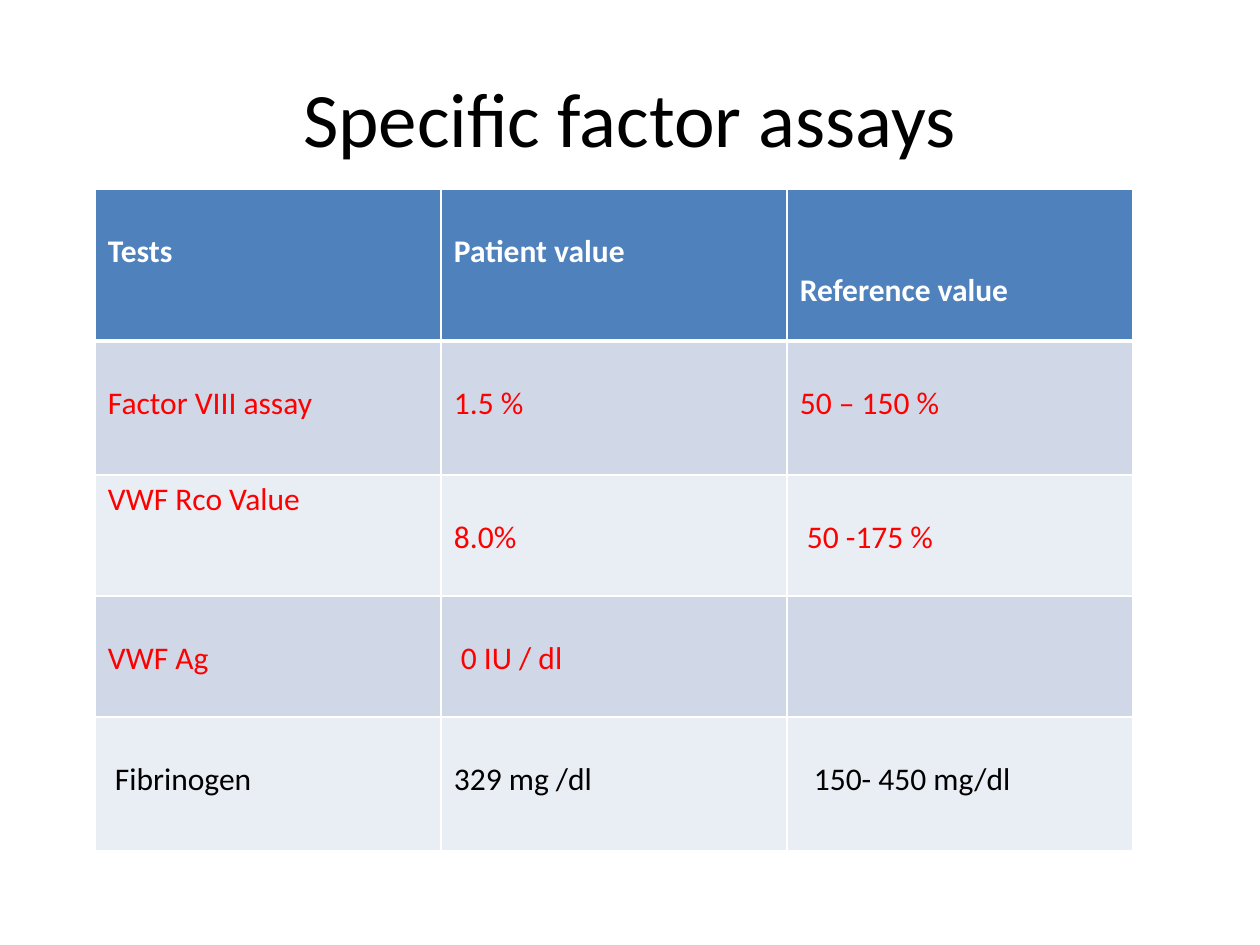
import pptx
import pptx.dml.color
import pptx.enum.text
import pptx.oxml
import pptx.oxml.ns
import pptx.util

RGB = pptx.dml.color.RGBColor
BLACK = RGB(0x00, 0x00, 0x00)
WHITE = RGB(0xFF, 0xFF, 0xFF)
RED = RGB(0xFF, 0x00, 0x00)
HEADER = RGB(0x4F, 0x81, 0xBD)
BANDS = RGB(0xD0, 0xD8, 0xE8), RGB(0xE9, 0xED, 0xF4)

EMU_PER_PX = 914400 / 126
FONT = "Calibri"
BODY_SIZE = 18
PAD_X, PAD_Y = 13, 6    # cell padding
LINE, SPACE = 38, 7     # height of a body line, width of a small indent

# One row: height, text colour, cells as (text, lines above, indent steps)
ROWS = [
    (152, WHITE, [("Tests", 1, 0), ("Patient value", 1, 0), ("Reference value", 2, 0)]),
    (134, RED, [("Factor VIII assay", 1, 0), ("1.5 %", 1, 0), ("50 – 150 %", 1, 0)]),
    (121, RED, [("VWF Rco Value", 0, 0), ("8.0%", 1, 0), ("50 -175 %", 1, 1)]),
    (121, RED, [("VWF Ag", 1, 0), ("0 IU / dl", 1, 1), ("", 0, 0)]),
    (134, BLACK, [("Fibrinogen", 1, 1), ("329 mg /dl", 1, 0), ("150- 450 mg/dl", 1, 2)]),
]


def px(n):
    return pptx.util.Emu(round(n * EMU_PER_PX))


class Deck:
    def __init__(self, width, height):
        self.prs = pptx.Presentation()
        self.prs.slide_width, self.prs.slide_height = px(width), px(height)
        self.s = self.prs.slides.add_slide(self.prs.slide_layouts[6])

    def run(self, p, text, size, color, bold=False):
        r = p.add_run()
        r.text = text
        r.font.name = FONT
        r.font.size = pptx.util.Pt(size)
        r.font.bold = bold
        r.font.color.rgb = color

    def title(self, text, x, y, w, h):
        sp = self.s.shapes.add_textbox(px(x), px(y), px(w), px(h))
        tf = sp.text_frame
        tf.word_wrap = True
        tf.vertical_anchor = pptx.enum.text.MSO_ANCHOR.MIDDLE
        p = tf.paragraphs[0]
        p.alignment = pptx.enum.text.PP_ALIGN.CENTER
        self.run(p, text, 44, BLACK)

    def border(self, cell, top, bottom):
        tc_pr = cell._tc.get_or_add_tcPr()
        sides = [("L", 1), ("R", 1), ("T", top), ("B", bottom)]
        for i, (side, points) in enumerate(sides):
            tc_pr.insert(i, pptx.oxml.parse_xml(
                f'<a:ln{side} {pptx.oxml.ns.nsdecls("a")} w="{pptx.util.Pt(points)}">'
                f'<a:solidFill><a:srgbClr val="{WHITE}"/></a:solidFill></a:ln{side}>'))

    def cell(self, cell, content, color, fill, bold):
        text, lines, steps = content
        cell.fill.solid()
        cell.fill.fore_color.rgb = fill
        cell.margin_left = px(PAD_X + steps * SPACE)
        cell.margin_right = px(PAD_X)
        cell.margin_top = px(PAD_Y + lines * LINE)
        cell.margin_bottom = px(PAD_Y)
        if text:
            self.run(cell.text_frame.paragraphs[0], text, BODY_SIZE, color, bold)

    def table(self, rows, x, y, col_width):
        n_cols = len(rows[0][2])
        height = sum(row[0] for row in rows)
        table = self.s.shapes.add_table(
            len(rows), n_cols, px(x), px(y), px(n_cols * col_width), px(height)).table
        table.first_row = table.horz_banding = False
        for col in table.columns:
            col.width = px(col_width)
        for i, (row_height, color, contents) in enumerate(rows):
            table.rows[i].height = px(row_height)
            fill = BANDS[(i - 1) % 2] if i else HEADER
            for j, content in enumerate(contents):
                cell = table.cell(i, j)
                self.cell(cell, content, color, fill, bold=i == 0)
                # A thick rule parts the header from the body
                self.border(cell, top=3 if i == 1 else 1, bottom=3 if i == 0 else 1)


def main():
    deck = Deck(1260, 945)
    # Title
    deck.title("Specific factor assays", 63, 38, 1134, 157)
    # Assay results
    deck.table(ROWS, 95, 189, 346)
    deck.prs.save("out.pptx")


if __name__ == "__main__":
    main()
